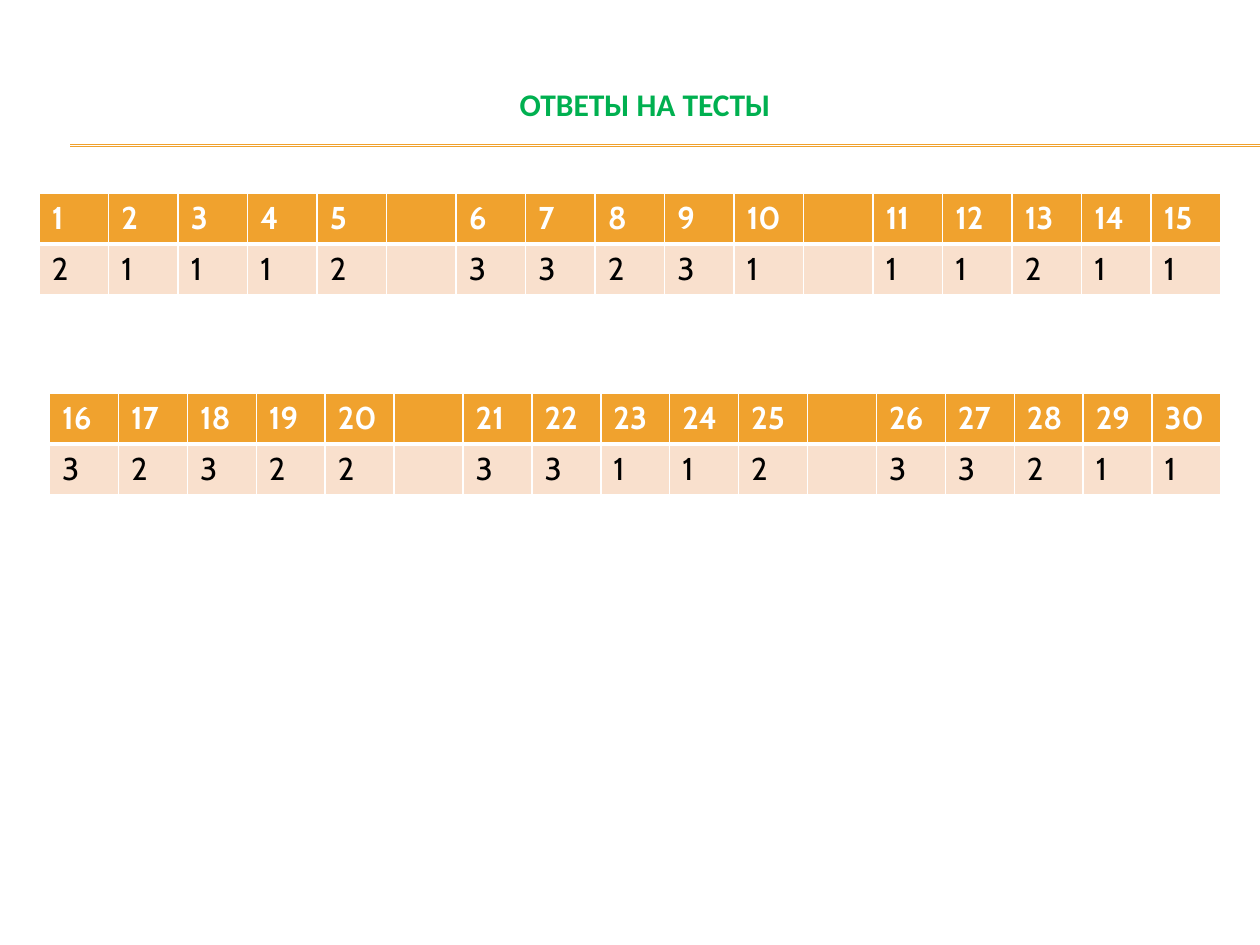
from itertools import product

from lxml.etree import SubElement
from pptx import Presentation
from pptx.dml.color import RGBColor as RGB
from pptx.enum.shapes import MSO_CONNECTOR as CONN
from pptx.enum.text import MSO_ANCHOR as ANCHOR, PP_ALIGN as ALIGN
from pptx.oxml.ns import qn
from pptx.util import Cm, Pt

THEME = {
    "accent": RGB.from_string("F0A22E"),
    "tint": RGB.from_string("F9E0CD"),
    "border": "FFFFFF",
    "rule": Pt(0.75),
    "title": {"name": "Calibri", "size": Pt(18), "bold": True, "color": RGB.from_string("00B050")},
    "head": {"name": "Cabin", "size": Pt(18), "bold": True, "color": RGB.from_string("FFFFFF")},
    "body": {"name": "Cabin", "size": Pt(18), "bold": False, "color": RGB.from_string("000000")},
}
GROUP = 5  # questions between two empty columns
TABLES = [  # first question, left, top, width in cm, answers by group
    (1, 0.79, 3.89, 23.83, ["21112", "33231", "11211"]),
    (16, 1.0, 7.92, 23.62, ["32322", "33112", "33211"]),
]
ROW_H = Cm(1.03)


def set_font(font, style):
    for key, value in style.items():
        if key == "color":
            font.color.rgb = value
        else:
            setattr(font, key, value)


def set_borders(cell, widths):
    """Draw the sides of a cell; widths maps L, R, T, B (in that order) to points."""
    tc_pr = cell._tc.get_or_add_tcPr()
    for i, (side, width) in enumerate(widths.items()):
        ln = SubElement(tc_pr, qn(f"a:ln{side}"), w=str(Pt(width)))
        fill = SubElement(ln, qn("a:solidFill"))
        SubElement(fill, qn("a:srgbClr"), val=THEME["border"])
        tc_pr.insert(i, ln)


prs = Presentation()
prs.slide_width, prs.slide_height = Cm(25.4), Cm(19.05)
s = prs.slides.add_slide(prs.slide_layouts[5])

# Title
sp = s.shapes.title
sp.left, sp.top, sp.width, sp.height = Cm(5.36), Cm(0.58), Cm(15.29), Cm(2.03)
tf = sp.text_frame
tf.vertical_anchor = ANCHOR.BOTTOM
p = tf.paragraphs[0]
p.alignment, p.line_spacing = ALIGN.CENTER, 1.15
r = p.add_run()
r.text = "ОТВЕТЫ НА ТЕСТЫ"
set_font(r.font, THEME["title"])

# Double rule under the title
for y in (2.92, 2.95):
    line = s.shapes.add_connector(CONN.STRAIGHT, Cm(1.42), Cm(y), prs.slide_width, Cm(y))
    line.line.color.rgb = THEME["accent"]
    line.line.width = THEME["rule"]
    SubElement(line._element.spPr, qn("a:effectLst"))

# Answer tables: question numbers above, answers below
for first, left, top, width, groups in TABLES:
    answers = list(" ".join(groups))
    numbers = [str(first + i - i // (GROUP + 1)) if a != " " else ""
               for i, a in enumerate(answers)]
    rows = [numbers, [a.strip() for a in answers]]
    n = len(answers)
    table = s.shapes.add_table(2, n, Cm(left), Cm(top), Cm(width), 2 * ROW_H).table
    table.horz_banding = False
    for col in table.columns:
        col.width = Cm(width / n)
    for row in table.rows:
        row.height = ROW_H
    for i, j in product(range(2), range(n)):
        cell = table.cell(i, j)
        cell.fill.solid()
        cell.fill.fore_color.rgb = THEME["tint" if i else "accent"]
        set_borders(cell, {"L": 1, "R": 1, "B": 1} if i else {"L": 1, "R": 1, "T": 1, "B": 3})
        p = cell.text_frame.paragraphs[0]
        style = THEME["body" if i else "head"]
        if rows[i][j]:
            r = p.add_run()
            r.text = rows[i][j]
            set_font(r.font, style)

prs.save("out.pptx")
